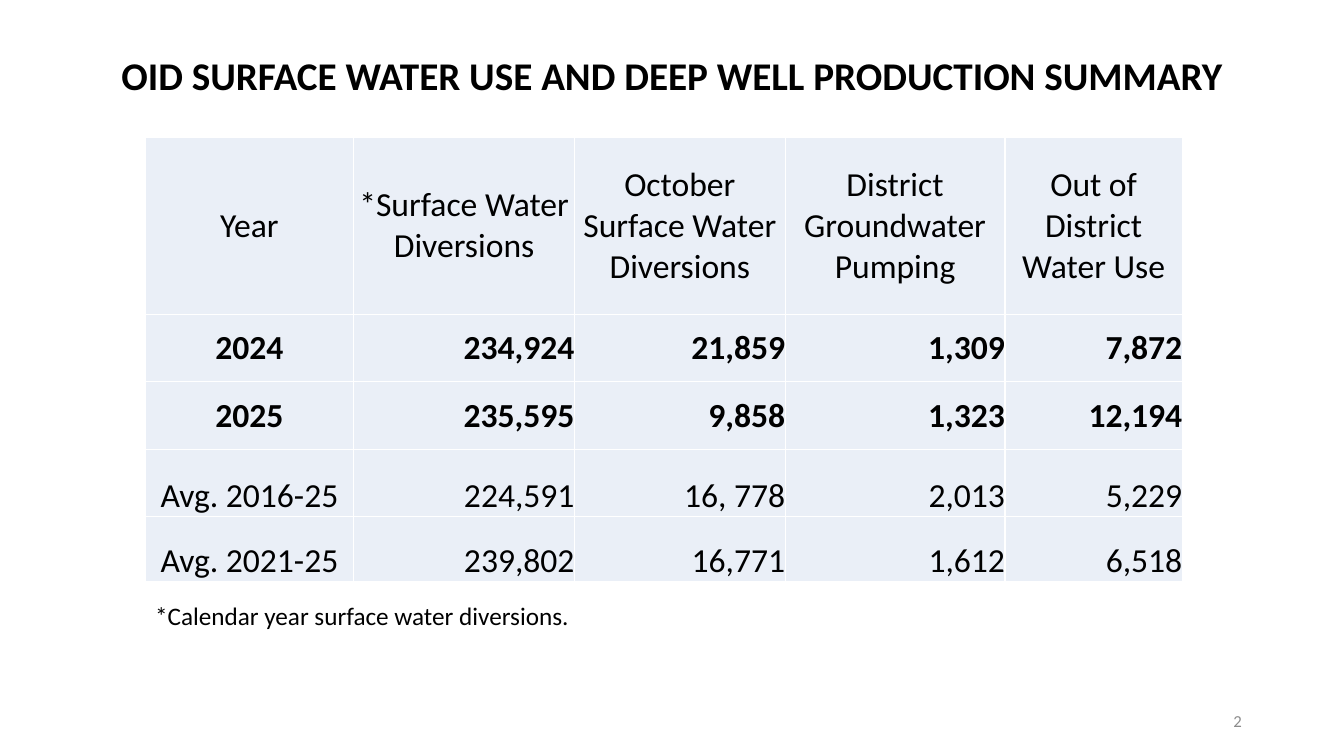
from lxml import etree
from pptx import Presentation
from pptx import util as u
from pptx.dml import color
from pptx.enum import text
from pptx.oxml import ns

CENTER, RIGHT, LEFT = text.PP_ALIGN.CENTER, text.PP_ALIGN.RIGHT, text.PP_ALIGN.LEFT
MIDDLE, BOTTOM, TOP = text.MSO_ANCHOR.MIDDLE, text.MSO_ANCHOR.BOTTOM, text.MSO_ANCHOR.TOP

HEADINGS = ["Year", "*Surface Water Diversions", "October Surface Water Diversions",
            "District Groundwater Pumping", "Out of District Water Use"]
YEARS = [
    ["2024", "234,924", "21,859", "1,309", "7,872"],
    ["2025", "235,595", "9,858", "1,323", "12,194"],
]
AVERAGES = [
    ["Avg. 2016-25", "224,591", "16, 778", "2,013", "5,229"],
    ["Avg. 2021-25", "239,802", "16,771", "1,612", "6,518"],
]
COLUMN_WIDTHS = [149, 157.7, 150.5, 157, 126.7]
ROW_HEIGHTS = [126.7, 48.2, 48.2, 48.2, 46.1]
TABLE_LEFT, TABLE_TOP = 103.7, 97.9
CELL_FILL, BORDER = "EAEFF7", "FFFFFF"

LABELS = [
    ("OID SURFACE WATER USE AND DEEP WELL PRODUCTION SUMMARY",
     (54.7, 33.1, 850.3, 41), CENTER, TOP, {"size": u.Pt(28), "bold": True}, "000000"),
    ("*Calendar year surface water diversions.",
     (TABLE_LEFT, 425.5, sum(COLUMN_WIDTHS), 29), LEFT, TOP, {"size": u.Pt(18)}, "000000"),
    ("2", (678.2, 500.4, 216, 28.8), RIGHT, MIDDLE, {"size": u.Pt(12)}, "8C8C8C"),
]


def paint(target, hex_color):
    target.rgb = color.RGBColor.from_string(hex_color)


def write(paragraph, words, align, font_values, hex_color):
    paragraph.alignment = align
    run = paragraph.add_run()
    run.text = words
    for name, value in {"name": "Calibri", **font_values}.items():
        setattr(run.font, name, value)
    paint(run.font.color, hex_color)


def add_borders(cell):
    properties = cell._tc.get_or_add_tcPr()
    for place, side in enumerate(("a:lnL", "a:lnR", "a:lnT", "a:lnB")):
        border = etree.Element(ns.qn(side), w=str(u.Pt(1)))
        fill = etree.SubElement(border, ns.qn("a:solidFill"))
        etree.SubElement(fill, ns.qn("a:srgbClr"), val=BORDER)
        properties.insert(place, border)


def add_summary(slide):
    rows = [HEADINGS, *YEARS, *AVERAGES]
    frame = slide.shapes.add_table(
        len(rows), len(HEADINGS), u.Pt(TABLE_LEFT), u.Pt(TABLE_TOP),
        u.Pt(sum(COLUMN_WIDTHS)), u.Pt(sum(ROW_HEIGHTS)))
    summary = frame.table
    for name in ("first_row", "horz_banding"):
        setattr(summary, name, False)
    for column, width in zip(summary.columns, COLUMN_WIDTHS):
        column.width = u.Pt(width)
    for row, height in zip(summary.rows, ROW_HEIGHTS):
        row.height = u.Pt(height)
    for r, entries in enumerate(rows):
        anchor = BOTTOM if entries in AVERAGES else MIDDLE
        for c, entry in enumerate(entries):
            cell = summary.cell(r, c)
            layout = {"vertical_anchor": anchor, "margin_left": 0, "margin_right": 0,
                      "margin_top": 0, "margin_bottom": 0}
            for name, value in layout.items():
                setattr(cell, name, value)
            cell.fill.solid()
            paint(cell.fill.fore_color, CELL_FILL)
            add_borders(cell)
            align = CENTER if r == 0 or c == 0 else RIGHT
            write(cell.text_frame.paragraphs[0], entry, align,
                  {"size": u.Pt(24), "bold": entries in YEARS}, "000000")


def add_label(slide, words, box, align, anchor, font_values, hex_color):
    frame = slide.shapes.add_textbox(*map(u.Pt, box)).text_frame
    for name, value in {"word_wrap": True, "vertical_anchor": anchor}.items():
        setattr(frame, name, value)
    write(frame.paragraphs[0], words, align, font_values, hex_color)


def main():
    deck = Presentation()
    deck.slide_width, deck.slide_height = u.Pt(960), u.Pt(540)
    slide = deck.slides.add_slide(deck.slide_layouts[6])
    add_summary(slide)
    for label in LABELS:
        add_label(slide, *label)
    deck.save("out.pptx")


if __name__ == "__main__":
    main()
